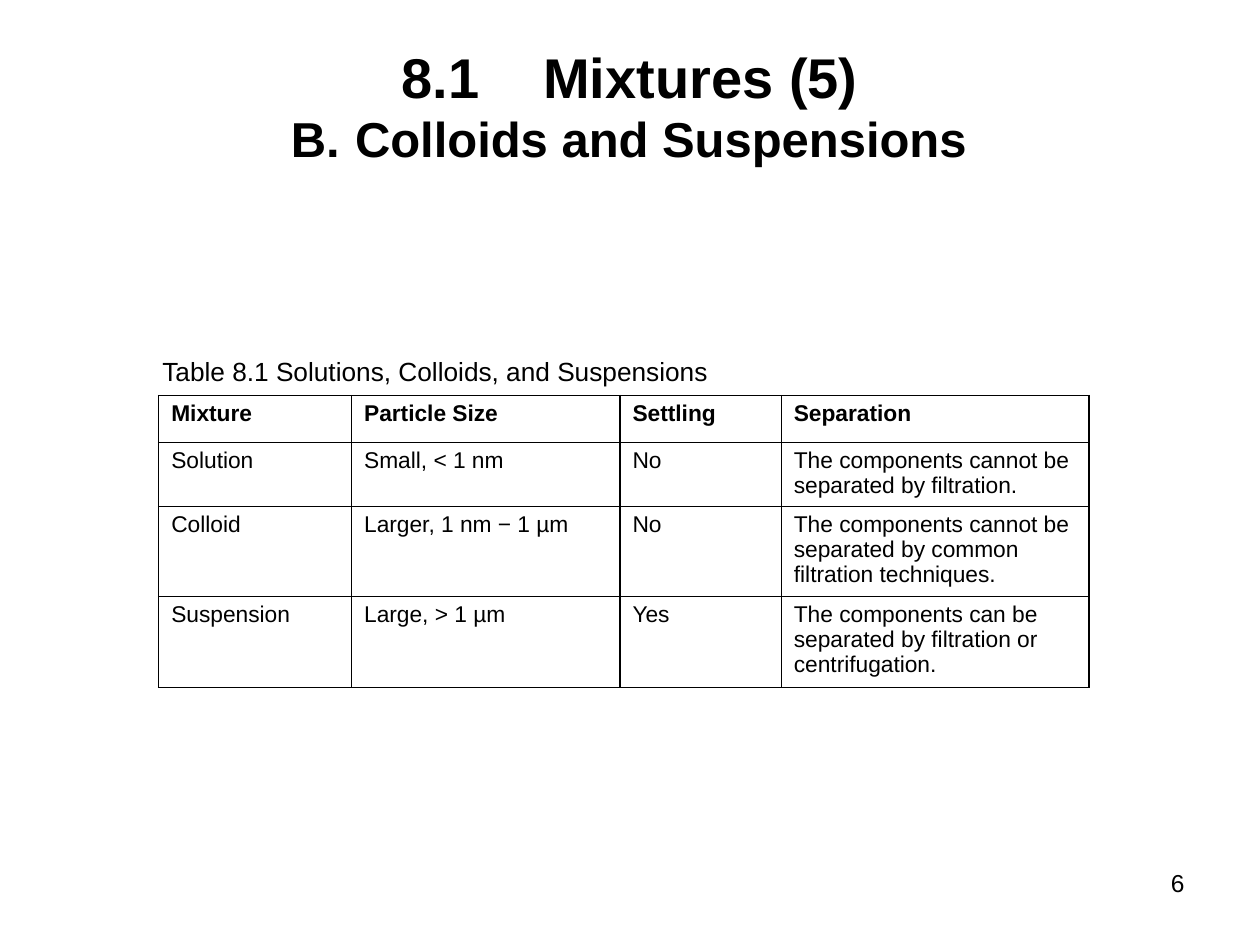
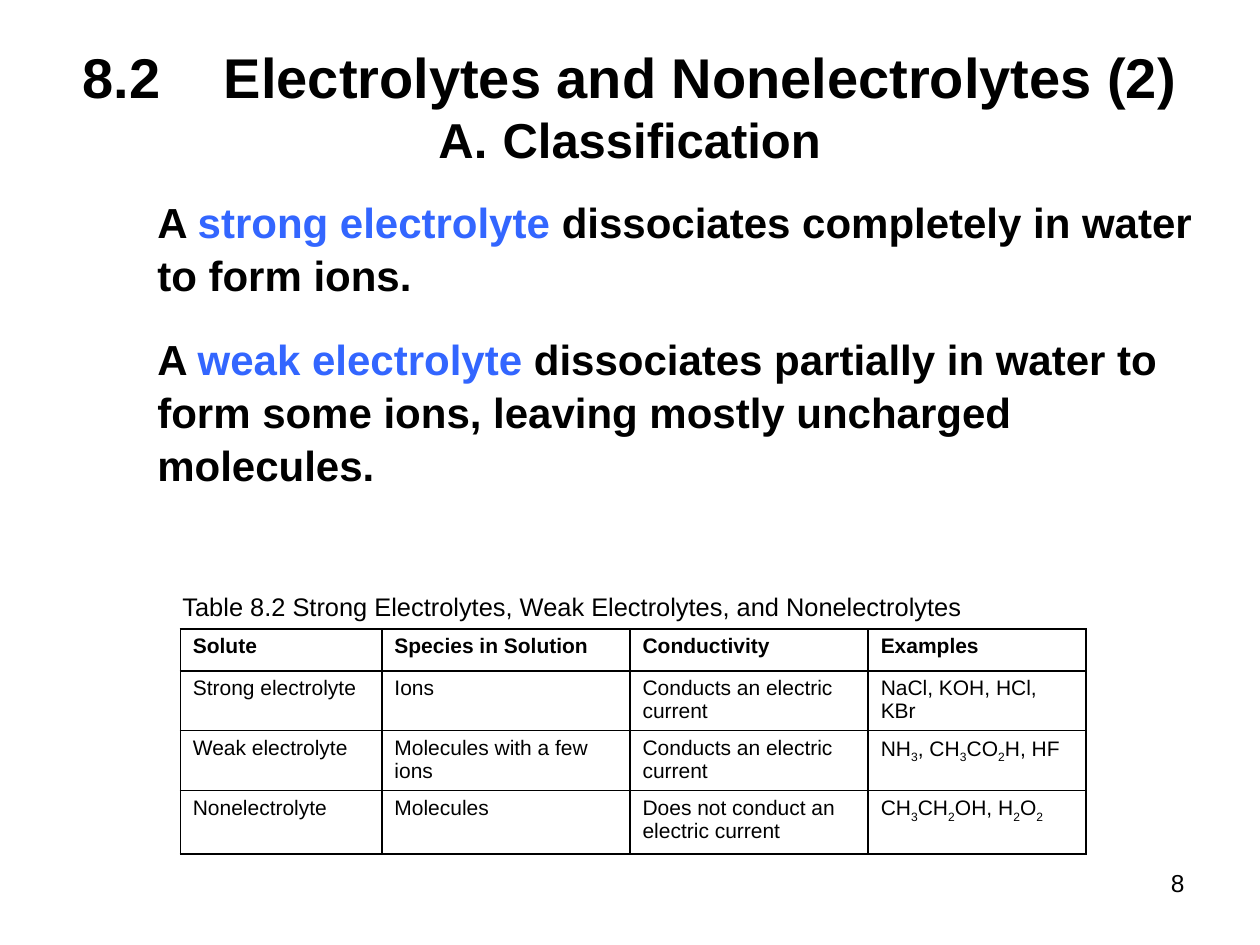
from dataclasses import dataclass
from typing import Any

from lxml import etree
from pptx import Presentation
from pptx import util as u
from pptx.dml import color as rgb
from pptx.enum import text as t
from pptx.oxml import ns

COLORS = {"ink": "000000", "term": "3366FF", "paper": "FFFFFF"}
FONT = "Arial"
MARK = "|"
CELL_SPACING = 0.98


@dataclass(frozen=True)
class Area:
    left: float
    top: float
    width: float
    height: float

    def lengths(self) -> tuple[u.Length, ...]:
        return tuple(u.Pt(v) for v in (self.left, self.top, self.width, self.height))


@dataclass(frozen=True)
class Heading:
    title: str
    title_area: Area
    subtitle: str
    subtitle_area: Area
    letter: int


@dataclass(frozen=True)
class Grid:
    caption: str
    caption_area: Area
    caption_size: float
    left: float
    top: float
    columns: tuple[float, ...]
    heights: tuple[float, ...]
    size: float
    rows: tuple[tuple[str, ...], ...]


@dataclass(frozen=True)
class Lesson:
    number: int
    heading: Heading
    grid: Grid
    definitions: tuple[str, ...] = ()


NUMBER_AREA = Area(571.7, 492.5, 112.3, 29.5)
DEFINITION_AREA = Area(82.8, 107.3, 608, 179.3)

LESSONS = (
    Lesson(
        6,
        Heading("8.1\t Mixtures (5)", Area(208.8, 15.1, 302.4, 56.2),
                "Colloids and Suspensions", Area(159.1, 58.3, 432, 45.4), 2),
        Grid(
            "Table 8.1 Solutions, Colloids, and Suspensions",
            Area(85.7, 199.4, 334.8, 23.8), 15, 90.7, 226.1,
            (110.2, 153.4, 92.2, 175.7), (26.7, 36.7, 50.7, 51.8), 13,
            (
                ("Mixture", "Particle Size", "Settling", "Separation"),
                ("Solution", "Small, < 1 nm", "No",
                 "The components cannot be separated by filtration."),
                ("Colloid", "Larger, 1 nm − 1 µm", "No",
                 "The components cannot be separated by common filtration techniques."),
                ("Suspension", "Large, > 1 µm", "Yes",
                 "The components can be separated by filtration or centrifugation."),
            ),
        ),
    ),
    Lesson(
        8,
        Heading("8.2\t Electrolytes and Nonelectrolytes (2)", Area(3.6, 24.5, 712.8, 38.2),
                "Classification", Area(243.4, 59, 258.5, 37.4), 1),
        Grid(
            "Table 8.2 Strong Electrolytes, Weak Electrolytes, and Nonelectrolytes",
            Area(97.2, 334.1, 506.2, 21.6), 14.5, 103, 359.3,
            (115.2, 141.8, 136.1, 124.6), (24.1, 34.2, 34.2, 36.3), 12,
            (
                ("Solute", "Species in Solution", "Conductivity", "Examples"),
                ("Strong electrolyte", "Ions", "Conducts an electric current",
                 "NaCl, KOH, HCl, KBr"),
                ("Weak electrolyte", "Molecules with a few ions",
                 "Conducts an electric current", "NH|3|, CH|3|CO|2|H, HF"),
                ("Nonelectrolyte", "Molecules", "Does not conduct an electric current",
                 "CH|3|CH|2|OH, H|2|O|2|"),
            ),
        ),
        (
            "A |strong electrolyte |dissociates completely in water to form ions.",
            "A |weak electrolyte |dissociates partially in water to form some ions, "
            "leaving mostly uncharged molecules.",
        ),
    ),
)


def write(para: Any, words: str, *, size: float, bold: bool = False,
          marked_color: str = "ink", marked_baseline: int = 0,
          align: t.PP_ALIGN = t.PP_ALIGN.LEFT, before: float = 0,
          after: float = 0, spacing: float = 1.0) -> None:
    para.alignment = align
    para.space_before, para.space_after = u.Pt(before), u.Pt(after)
    para.line_spacing = spacing
    for index, piece in enumerate(words.split(MARK)):
        if not piece:
            continue
        marked = index % 2 == 1
        span = para.add_run()
        span.text = piece
        span.font.name, span.font.size, span.font.bold = FONT, u.Pt(size), bold
        span.font.color.rgb = rgb.RGBColor.from_string(
            COLORS[marked_color if marked else "ink"])
        if marked and marked_baseline:
            span.font._element.set("baseline", str(marked_baseline))


def add_box(page: Any, area: Area, anchor: t.MSO_ANCHOR = t.MSO_ANCHOR.TOP) -> Any:
    frame = page.shapes.add_textbox(*area.lengths()).text_frame
    frame.word_wrap = True
    frame.vertical_anchor = anchor
    return frame


def set_tab(para: Any, position: float) -> None:
    stops = etree.SubElement(para._p.get_or_add_pPr(), ns.qn("a:tabLst"))
    etree.SubElement(stops, ns.qn("a:tab"), pos=str(u.Pt(position)), algn="l")


def set_letter(para: Any, start: int, indent: float) -> None:
    properties = para._p.get_or_add_pPr()
    properties.set("marL", str(u.Pt(indent)))
    properties.set("indent", str(-u.Pt(indent)))
    etree.SubElement(properties, ns.qn("a:buFont"), typeface=FONT)
    etree.SubElement(properties, ns.qn("a:buAutoNum"),
                     type="alphaUcPeriod", startAt=str(start))


def draw_heading(page: Any, heading: Heading) -> None:
    para = add_box(page, heading.title_area, t.MSO_ANCHOR.MIDDLE).paragraphs[0]
    write(para, heading.title, size=32, bold=True, align=t.PP_ALIGN.CENTER)
    set_tab(para, 72)
    para = add_box(page, heading.subtitle_area).paragraphs[0]
    write(para, heading.subtitle, size=28, bold=True, before=2.8)
    set_letter(para, heading.letter, 36.7)


def draw_definitions(page: Any, definitions: tuple[str, ...]) -> None:
    frame = add_box(page, DEFINITION_AREA)
    for index, words in enumerate(definitions):
        para = frame.add_paragraph() if index else frame.paragraphs[0]
        write(para, words, size=24, bold=True, marked_color="term",
              after=18, spacing=1.05)


def set_borders(cell: Any) -> None:
    properties = cell._tc.get_or_add_tcPr()
    for index, side in enumerate(("lnL", "lnR", "lnT", "lnB")):
        line = etree.Element(ns.qn(f"a:{side}"), w=str(u.Pt(1)))
        fill = etree.SubElement(line, ns.qn("a:solidFill"))
        etree.SubElement(fill, ns.qn("a:srgbClr"), val=COLORS["ink"])
        properties.insert(index, line)


def draw_grid(page: Any, grid: Grid) -> None:
    caption = add_box(page, grid.caption_area).paragraphs[0]
    write(caption, grid.caption, size=grid.caption_size, before=1)
    area = Area(grid.left, grid.top, sum(grid.columns), sum(grid.heights))
    table = page.shapes.add_table(
        len(grid.rows), len(grid.columns), *area.lengths()).table
    table.first_row = table.horz_banding = False
    for column, width in zip(table.columns, grid.columns):
        column.width = u.Pt(width)
    for row, (height, entries) in enumerate(zip(grid.heights, grid.rows)):
        table.rows[row].height = u.Pt(height)
        for column, words in enumerate(entries):
            cell = table.cell(row, column)
            cell.fill.background()
            cell.margin_bottom = u.Pt(2)
            set_borders(cell)
            write(cell.text_frame.paragraphs[0], words, size=grid.size,
                  bold=row == 0, marked_baseline=-25000, spacing=CELL_SPACING)


def draw_lesson(deck: Any, lesson: Lesson) -> None:
    page = deck.slides.add_slide(deck.slide_layouts[6])
    page.background.fill.solid()
    page.background.fill.fore_color.rgb = rgb.RGBColor.from_string(COLORS["paper"])
    write(add_box(page, NUMBER_AREA).paragraphs[0], str(lesson.number),
          size=14, align=t.PP_ALIGN.RIGHT)
    draw_heading(page, lesson.heading)
    if lesson.definitions:
        draw_definitions(page, lesson.definitions)
    draw_grid(page, lesson.grid)


def main() -> None:
    deck = Presentation()
    deck.slide_width, deck.slide_height = u.Pt(720), u.Pt(540)
    for lesson in LESSONS:
        draw_lesson(deck, lesson)
    deck.save("out.pptx")


if __name__ == "__main__":
    main()
